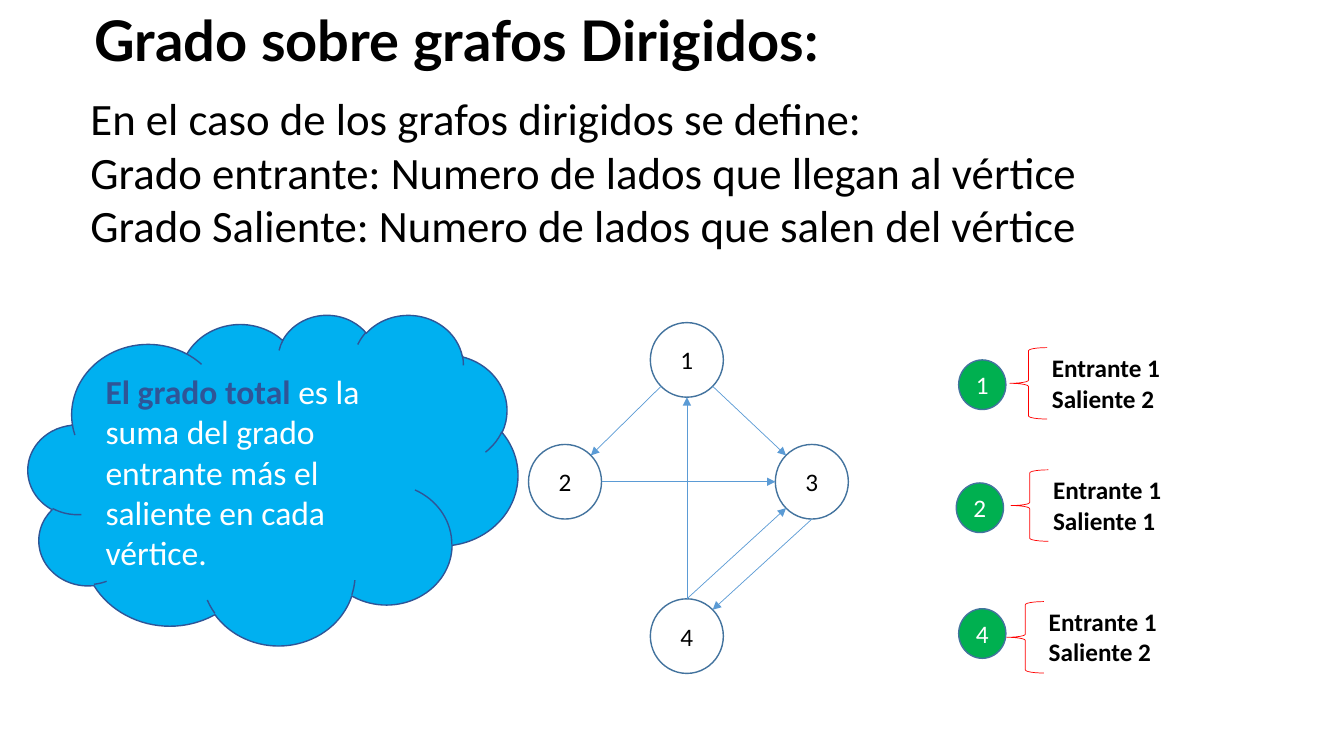
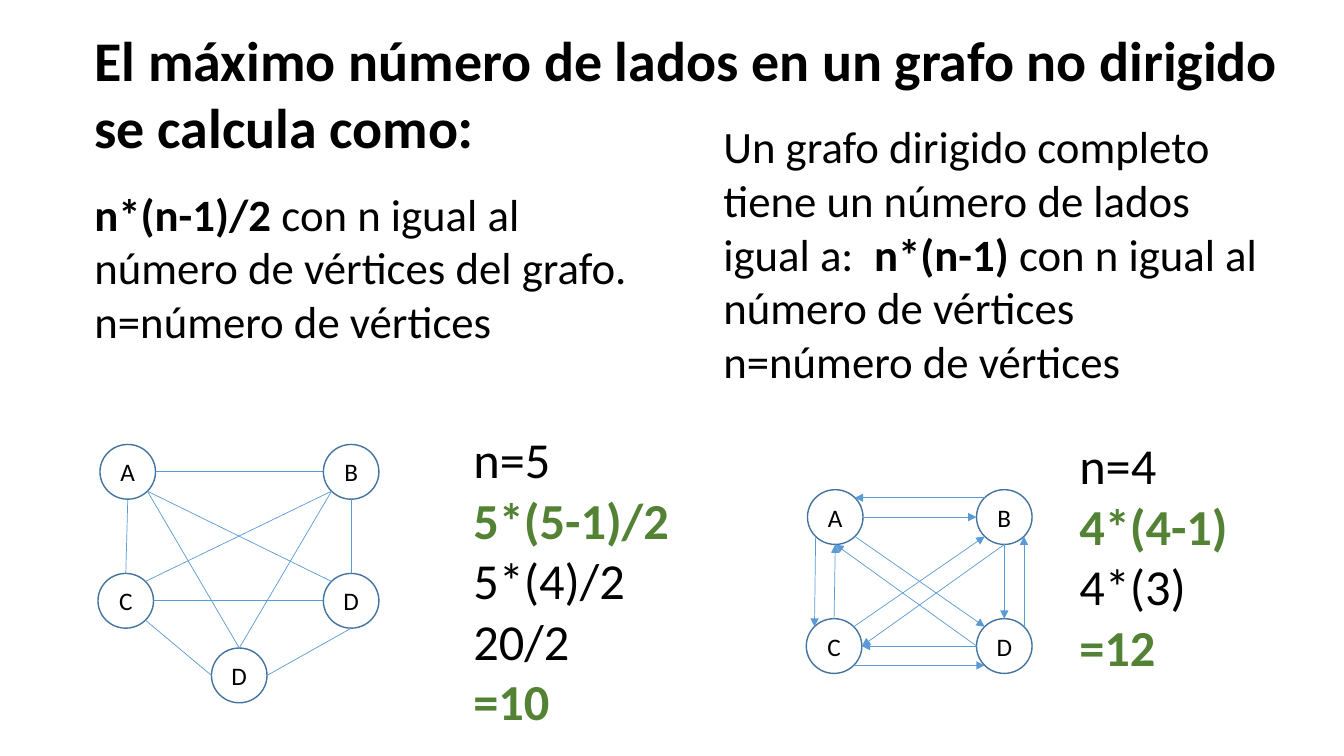
"""Build two slides on vertex degree and the number of edges in graphs."""
import math

import lxml.etree
import pptx
import pptx.dml.color
import pptx.enum.shapes
import pptx.enum.text
import pptx.oxml.ns
import pptx.util

Cm, Pt = pptx.util.Cm, pptx.util.Pt
SHAPE = pptx.enum.shapes.MSO_SHAPE
ALIGN = pptx.enum.text.PP_ALIGN
ANCHOR = pptx.enum.text.MSO_ANCHOR

THEME = {
    "colors": {
        "black": "000000", "white": "FFFFFF", "outline": "43739E",
        "edge": "5B9BD5", "badge": "00B050", "brace": "FF0000",
        "cloud": "00B0F0", "navy": "2F5597", "result": "548235",
    },
    "text": {
        "title": ("Calibri", 40, True, "black"),
        "title_lato": ("Lato", 40, True, "black"),
        "body": ("Calibri", 32, False, "black"),
        "body_bold": ("Calibri", 32, True, "black"),
        "step": ("Calibri", 36, False, "black"),
        "step_key": ("Calibri", 36, True, "result"),
        "node": ("Calibri", 18, False, "black"),
        "badge": ("Calibri", 18, False, "white"),
        "degree": ("Calibri", 18, True, "black"),
        "cloud": ("Calibri", 24, False, "white"),
        "cloud_key": ("Calibri", 24, True, "navy"),
    },
    "outline_width": 1,
    "thin_width": 0.5,
}

DEGREE_SLIDE = {
    "title": ((2.13, 0, 26.06, 1.96), [("Grado sobre grafos Dirigidos:", "title_lato")]),
    "texts": [
        ((2.03, 2.16, 29.79, 4.37), [
            [("En el caso de los grafos dirigidos se define:", "body")],
            [("Grado entrante: Numero de lados que llegan al vértice", "body")],
            [("Grado Saliente: Numero de lados que salen del vértice", "body")],
        ]),
    ],
    "graphs": [{
        "size": (1.84, 1.88),
        "directed": True,
        "nodes": {"1": (17.31, 9.07), "4": (17.31, 16.03),
                  "2": (14.24, 12.14), "3": (20.46, 12.14)},
        "edges": ["1 se 3 nw", "3 s 4 ne", "4 n 1 s",
                  "2 e 3 w", "1 sw 2 ne", "4 n 3 sw"],
    }],
}

EDGE_COUNT_SLIDE = {
    "title": ((2.13, 0.51, 31.75, 3.68), [
        ("El máximo número de lados en un grafo no dirigido se calcula como", "title"),
        (":", "title_lato"),
    ]),
    "texts": [
        ((2.13, 4.57, 14.38, 4.37), [
            [("n*(n-1)/2 ", "body_bold"),
             ("con n igual al número de vértices del grafo.", "body")],
            [("n=número de vértices", "body")],
        ]),
        ((17.98, 2.87, 14.38, 7.09), [
            [("Un grafo dirigido completo tiene un número de lados igual a:  ", "body"),
             ("n*(n-1)", "body_bold"),
             (" con n igual al número de vértices", "body")],
            [("n=número de vértices", "body")],
        ]),
        ((11.68, 10.67, 6.86, 7.95), [
            [("n=5", "step")], [("5*(5-1)/2", "step_key")], [("5*(4)/2", "step")],
            [("20/2", "step")], [("=10", "step_key")],
        ]),
        ((26.95, 10.82, 6.86, 6.4), [
            [("n=4", "step")], [("4*(4-1)", "step_key")],
            [("4*(3)", "step")], [("=12", "step_key")],
        ]),
    ],
    "graphs": [
        {
            "size": (1.4, 1.38),
            "directed": False,
            "nodes": {"A": (3.22, 11.89), "B": (8.85, 11.89), "C": (3.17, 15.14),
                      "D": (8.85, 15.14), "E": (6.03, 17.02)},
            "labels": {"E": "D"},
            "edges": ["A e B w", "B s D n", "A s C n", "C e D w", "C ne B sw",
                      "A se D nw", "C se E w", "D s E e", "E n A se", "E n B sw"],
        },
        {
            "size": (1.4, 1.38),
            "directed": True,
            "nodes": {"A": (21.05, 13.03), "B": (25.31, 13.03),
                      "C": (21.02, 16.28), "D": (25.31, 16.28)},
            "edges": ["A e B w", "B s D n", "C n A s", "D w C e", "C ne B sw",
                      "A se D nw", "B nw A ne", "A sw C nw", "C se D sw",
                      "D ne B se", "B s C e", "D w A s"],
        },
    ],
}

DEGREES = [
    ("1", ["Entrante 1", "Saliente 2"], (24.16, 9.07), (25.45, 8.76)),
    ("2", ["Entrante 1", "Saliente 1"], (24.1, 12.17), (25.48, 11.84)),
    ("4", ["Entrante 1", "Saliente 2"], (24.16, 15.34), (25.37, 15.16)),
]
BADGE_SIZE, BRACE_SIZE = (1.19, 1.25), (0.94, 1.8)
DEGREE_INDENT, DEGREE_WIDTH = 0.81, 5.97

CLOUD_BOX = (0.71, 7.92, 12.34, 8.33)
CLOUD_TEXT = [[
    ("El grado total ", "cloud_key"),
    ("es la suma del grado entrante más el saliente en cada vértice.", "cloud"),
]]

COMPASS = ["e", "se", "s", "sw", "w", "nw", "n", "ne"]


def color(name):
    """Return the theme color with this name."""
    return pptx.dml.color.RGBColor.from_string(THEME["colors"][name])


def set_values(target, **values):
    """Set each named value on the target."""
    for name, value in values.items():
        setattr(target, name, value)


def write(frame, paragraphs, align=ALIGN.LEFT, **frame_format):
    """Fill a text frame with paragraphs of (text, style) runs."""
    set_values(frame, **{"word_wrap": True, "vertical_anchor": ANCHOR.TOP, **frame_format})
    for index, runs in enumerate(paragraphs):
        paragraph = frame.add_paragraph() if index else frame.paragraphs[0]
        paragraph.alignment = align
        for text, style in runs:
            name, size, bold, color_name = THEME["text"][style]
            run = paragraph.add_run()
            run.text = text
            set_values(run.font, name=name, size=Pt(size), bold=bold)
            run.font.color.rgb = color(color_name)


def add_text(slide, box, paragraphs):
    """Add a wrapping text box."""
    write(slide.shapes.add_textbox(*map(Cm, box)).text_frame, paragraphs)


def add_shape(slide, kind, box, fill, line, width="outline_width"):
    """Add a flat preset shape, unfilled when fill is None."""
    shape = slide.shapes.add_shape(kind, *map(Cm, box))
    shape.shadow.inherit = False
    if fill:
        shape.fill.solid()
        shape.fill.fore_color.rgb = color(fill)
    else:
        shape.fill.background()
    shape.line.color.rgb = color(line)
    shape.line.width = Pt(THEME[width])
    return shape


def add_circle(slide, box, label, fill, style):
    """Add a circle with a centred label."""
    circle = add_shape(slide, SHAPE.OVAL, box, fill, "outline")
    write(circle.text_frame, [[(label, style)]], ALIGN.CENTER,
          word_wrap=False, vertical_anchor=ANCHOR.MIDDLE, margin_left=0,
          margin_right=0, margin_top=0, margin_bottom=0)


def add_edge(slide, start, end, directed):
    """Add a thin line, with an arrowhead at its end when directed."""
    connector = slide.shapes.add_connector(
        pptx.enum.shapes.MSO_CONNECTOR.STRAIGHT, *map(Cm, (*start, *end)))
    connector.line.color.rgb = color("edge")
    connector.line.width = Pt(THEME["thin_width"])
    qn = pptx.oxml.ns.qn
    properties = connector._element.spPr
    if directed:
        lxml.etree.SubElement(properties.find(qn("a:ln")), qn("a:tailEnd"), type="triangle")
    lxml.etree.SubElement(properties, qn("a:effectLst"))


def rim_point(center, size, direction):
    """Return the point of an ellipse in a compass direction."""
    angle = COMPASS.index(direction) * math.pi / 4
    return (center[0] + size[0] / 2 * math.cos(angle),
            center[1] + size[1] / 2 * math.sin(angle))


def add_graph(slide, graph):
    """Draw the nodes of a graph and the edges between their rims."""
    nodes, size = graph["nodes"], graph["size"]
    for key, (x, y) in nodes.items():
        box = (x - size[0] / 2, y - size[1] / 2, *size)
        add_circle(slide, box, graph.get("labels", {}).get(key, key), "white", "node")
    for edge in graph["edges"]:
        source, leaving, target, arriving = edge.split()
        add_edge(slide, rim_point(nodes[source], size, leaving),
                 rim_point(nodes[target], size, arriving), graph["directed"])


def add_degrees(slide):
    """Add each vertex badge with its brace and degrees."""
    for label, lines, badge, brace in DEGREES:
        add_circle(slide, (*badge, *BADGE_SIZE), label, "badge", "badge")
        add_text(slide, (brace[0] + DEGREE_INDENT, brace[1], DEGREE_WIDTH, BRACE_SIZE[1]),
                 [[(line, "degree")] for line in lines])
        add_shape(slide, SHAPE.LEFT_BRACE, (*brace, *BRACE_SIZE), None, "brace", "thin_width")


def add_slide(presentation, content):
    """Add a slide with its title, texts and graphs."""
    slide = presentation.slides.add_slide(presentation.slide_layouts[5])
    box, runs = content["title"]
    title = slide.shapes.title
    set_values(title, **dict(zip(("left", "top", "width", "height"), map(Cm, box))))
    write(title.text_frame, [runs], auto_size=pptx.enum.text.MSO_AUTO_SIZE.NONE)
    for box, paragraphs in content["texts"]:
        add_text(slide, box, paragraphs)
    for graph in content["graphs"]:
        add_graph(slide, graph)
    return slide


def main():
    """Build and save the presentation."""
    presentation = pptx.Presentation()
    set_values(presentation, slide_width=Cm(33.87), slide_height=Cm(19.05))
    degree_slide = add_slide(presentation, DEGREE_SLIDE)
    add_degrees(degree_slide)
    cloud = add_shape(degree_slide, SHAPE.CLOUD, CLOUD_BOX, "cloud", "navy")
    write(cloud.text_frame, CLOUD_TEXT, vertical_anchor=ANCHOR.MIDDLE)
    add_slide(presentation, EDGE_COUNT_SLIDE)
    presentation.save("out.pptx")


if __name__ == "__main__":
    main()
